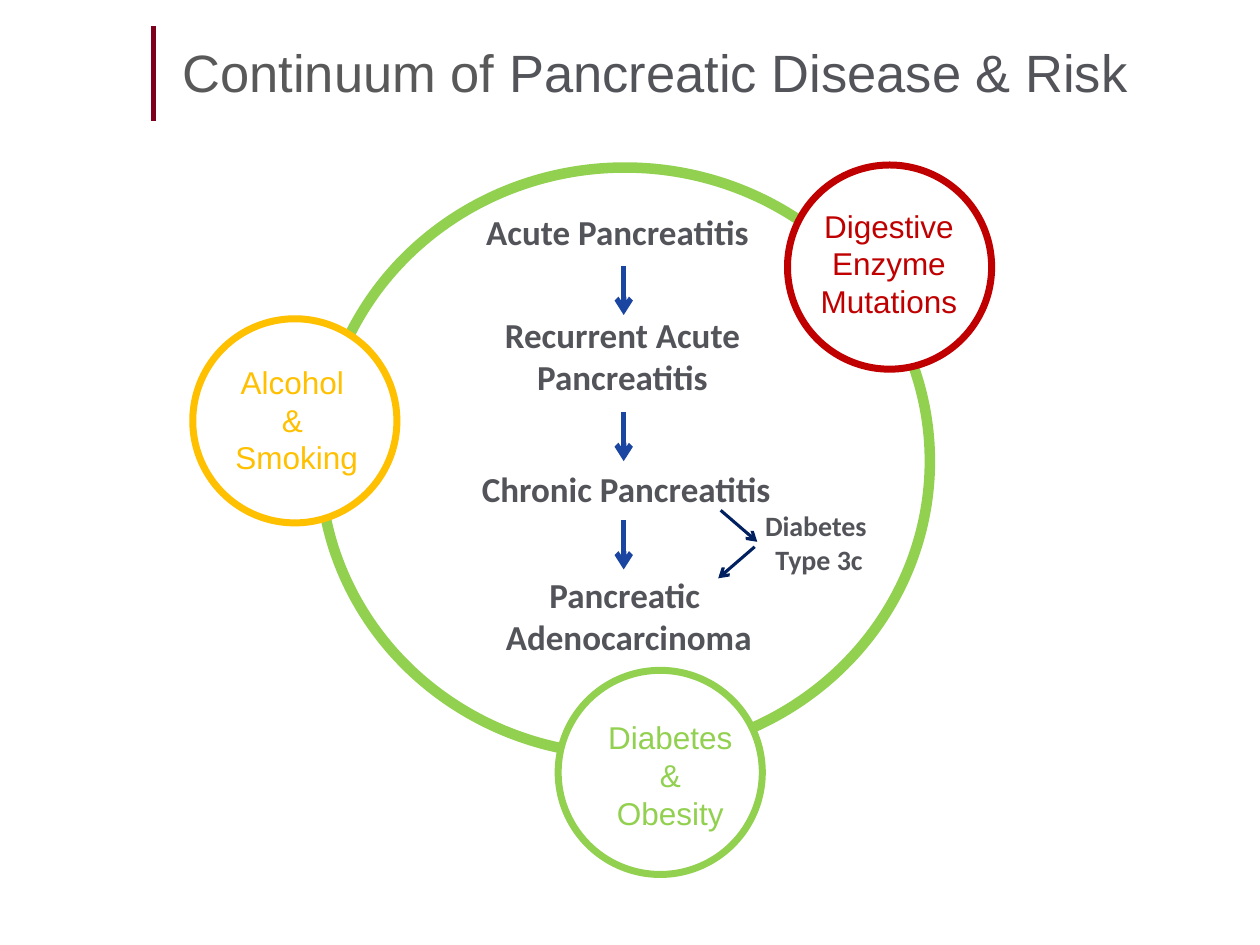
from pptx import Presentation
from pptx.util import Inches, Pt
from pptx.dml.color import RGBColor
from pptx.enum.shapes import MSO_CONNECTOR, MSO_SHAPE
from pptx.enum.text import PP_ALIGN
from pptx.oxml.ns import qn
from lxml import etree

LEFT, CENTER = PP_ALIGN.LEFT, PP_ALIGN.CENTER
OVAL, STRAIGHT = MSO_SHAPE.OVAL, MSO_CONNECTOR.STRAIGHT

GRAY, MAROON, BLUE, NAVY = "53545A", "7D001D", "1A46A2", "002060"
RED, AMBER, GREEN = "C00000", "FFC000", "92D050"

TITLE = [[("Continuum of ", "595959"), ("Pancreatic Disease & Risk", GRAY)]]

# left, top, width, height, size, alignment, lines
STAGES = [
    (3.76, 1.62, 3.48, 0.44, 20, LEFT, ["Acute Pancreatitis"]),
    (3.2, 2.44, 3.48, 0.77, 20, CENTER, ["Recurrent Acute Pancreatitis"]),
    (3.23, 3.66, 3.48, 0.44, 20, CENTER, ["Chronic Pancreatitis"]),
    (3.25, 4.5, 3.48, 0.77, 20, CENTER, ["Pancreatic ", "Adenocarcinoma"]),
    (5.49, 3.99, 2.02, 0.64, 16, CENTER, ["Diabetes ", "Type 3c"]),
]

STAGE_ARROW_X, STAGE_ARROW_LENGTH = 4.95, 0.39
STAGE_ARROW_TOPS = [2.11, 3.27, 4.13]
DIABETES_ARROWS = [(5.72, 4.05, 6.01, 4.3), (5.99, 4.34, 5.7, 4.59)]

# circle left and top, colour, label box, label lines
RISK_SIZE = 1.62
RISKS = [
    (6.25, 1.31, RED, (6.28, 1.59, 1.55, 1.01), ["Digestive Enzyme Mutations"]),
    (1.53, 2.53, AMBER, (1.6, 2.83, 1.51, 1.01), ["Alcohol ", "& ", "Smoking"]),
    (4.43, 5.32, GREEN, (4.43, 5.65, 1.78, 1.01), ["Diabetes", "&", "Obesity"]),
]


def rgb(color):
    return RGBColor.from_string(color)


def add_text(s, box, lines, size, color=GRAY, font="Arial", bold=False, align=CENTER):
    """Each line is a string or a list of (text, colour) runs."""
    tf = s.shapes.add_textbox(*map(Inches, box)).text_frame
    tf.word_wrap = True
    for i, line in enumerate(lines):
        p = tf.add_paragraph() if i else tf.paragraphs[0]
        p.alignment = align
        for text, run_color in [(line, color)] if isinstance(line, str) else line:
            r = p.add_run()
            r.text = text
            r.font.name = font
            r.font.size = Pt(size)
            r.font.bold = bold
            r.font.color.rgb = rgb(run_color)


def add_circle(s, box, color, weight):
    sp = s.shapes.add_shape(OVAL, *map(Inches, box))
    sp.shadow.inherit = False
    sp.fill.solid()
    sp.fill.fore_color.rgb = rgb("FFFFFF")
    sp.line.color.rgb = rgb(color)
    sp.line.width = Pt(weight)


def add_line(s, ends, color, weight, arrow=True):
    line = s.shapes.add_connector(STRAIGHT, *map(Inches, ends))
    line.line.color.rgb = rgb(color)
    line.line.width = Pt(weight)
    if arrow:
        etree.SubElement(line.line._get_or_add_ln(), qn("a:tailEnd"), type="arrow")
    etree.SubElement(line._element.spPr, qn("a:effectLst"))


def main():
    prs = Presentation()
    prs.slide_width, prs.slide_height = Inches(10), Inches(7.5)
    s = prs.slides.add_slide(prs.slide_layouts[6])

    add_line(s, (1.22, 0.96, 1.22, 0.21), MAROON, 3, arrow=False)
    add_circle(s, (2.54, 1.33, 4.84, 4.66), GREEN, 6)
    add_text(s, (1.35, 0.27, 8.12, 0.61), TITLE, 30, align=LEFT)

    for *box, size, align, lines in STAGES:
        add_text(s, box, lines, size, font="Calibri", bold=True, align=align)
    for ends in DIABETES_ARROWS:
        add_line(s, ends, NAVY, 1.75)
    for top in STAGE_ARROW_TOPS:
        ends = (STAGE_ARROW_X, top, STAGE_ARROW_X, top + STAGE_ARROW_LENGTH)
        add_line(s, ends, BLUE, 3)

    for left, top, color, label_box, lines in RISKS:
        add_circle(s, (left, top, RISK_SIZE, RISK_SIZE), color, 4)
        add_text(s, label_box, lines, 18, color=color)

    prs.save("out.pptx")


if __name__ == "__main__":
    main()
